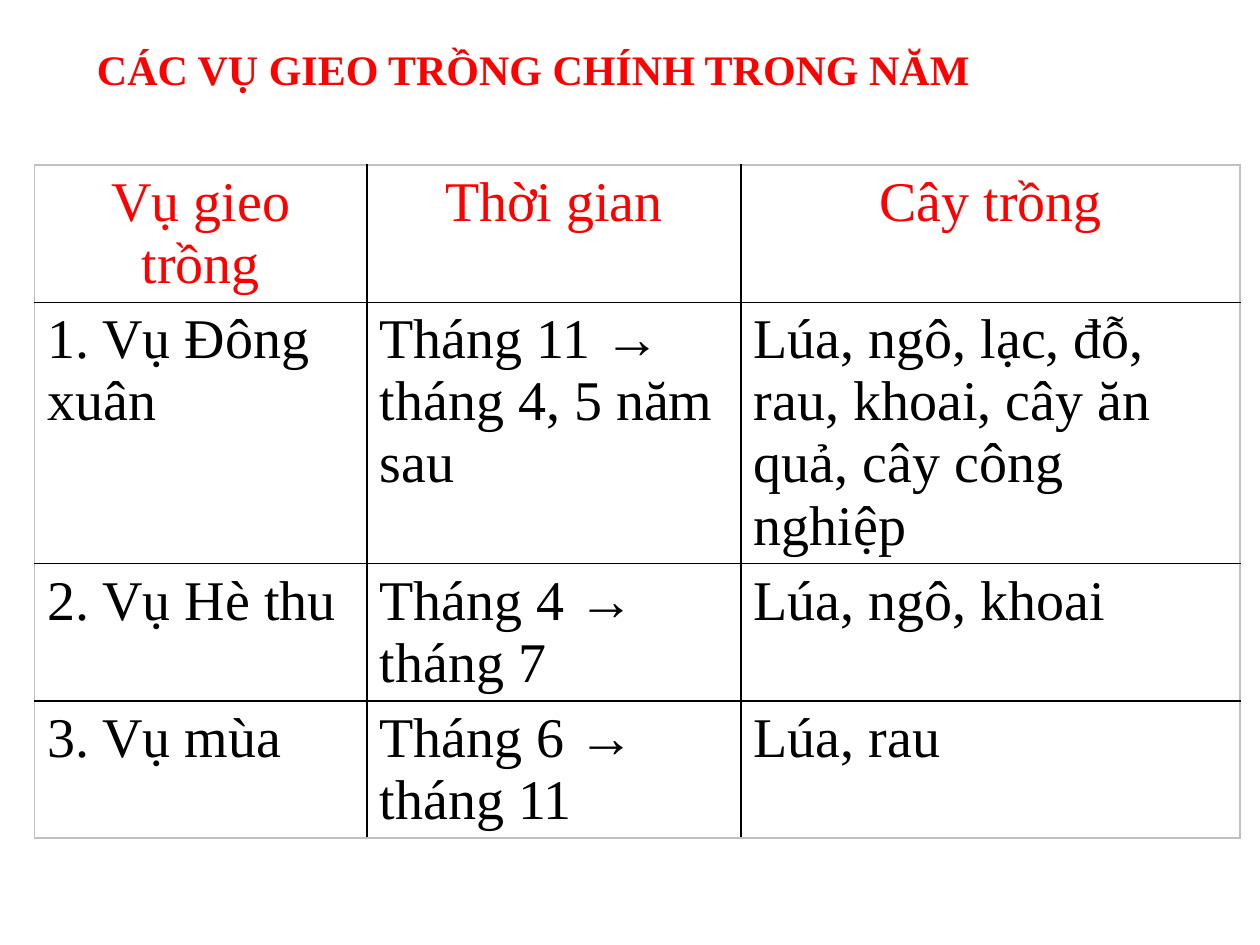
from dataclasses import dataclass

from lxml import etree
from pptx import Presentation
from pptx.dml.color import RGBColor
from pptx.enum.text import MSO_ANCHOR, MSO_AUTO_SIZE, PP_ALIGN
from pptx.oxml.ns import qn
from pptx.util import Cm, Pt

LEFT, CENTER = PP_ALIGN.LEFT, PP_ALIGN.CENTER
TOP = MSO_ANCHOR.TOP
NO_AUTOFIT = MSO_AUTO_SIZE.NONE
TITLE_ONLY = 5


@dataclass(frozen=True)
class Theme:
    font: str = "Times New Roman"
    accent: str = "FF0000"
    ink: str = "000000"
    paper: str = "FFFFFF"
    frame: str = "C0C0C0"
    title_size: int = 24
    table_size: int = 32
    border: int = 1


THEME = Theme()

TITLE = "CÁC VỤ GIEO TRỒNG CHÍNH TRONG NĂM"
SEASONS = [
    ("Vụ gieo trồng", "Thời gian", "Cây trồng"),
    ("1. Vụ Đông xuân", "Tháng 11 → tháng 4, 5 năm sau",
     "Lúa, ngô, lạc, đỗ, rau, khoai, cây ăn quả, cây công nghiệp"),
    ("2. Vụ Hè thu", "Tháng 4 → tháng 7", "Lúa, ngô, khoai"),
    ("3. Vụ mùa", "Tháng 6 → tháng 11", "Lúa, rau"),
]
COLUMN_WIDTHS = (6.7, 7.54, 10.06)
ROW_HEIGHTS = (2.67, 4.32, 2.51, 2.51)


def write_text(text_frame, text, *, size, color=THEME.ink, bold=False, align=LEFT):
    paragraph = text_frame.paragraphs[0]
    paragraph.alignment = align
    run = paragraph.add_run()
    run.text = text
    run.font.name = THEME.font
    run.font.size = Pt(size)
    run.font.bold = bold
    run.font.color.rgb = RGBColor.from_string(color)


def add_border(cell, side, color):
    properties = cell._tc.get_or_add_tcPr()
    line = etree.SubElement(properties, qn(f"a:ln{side}"), w=str(Pt(THEME.border)))
    fill = etree.SubElement(line, qn("a:solidFill"))
    etree.SubElement(fill, qn("a:srgbClr"), val=color)


def add_title(slide, text):
    title = slide.shapes.title
    title.left, title.top, title.width, title.height = Cm(1.7), Cm(0.64), Cm(19.33), Cm(1.57)
    text_frame = title.text_frame
    text_frame.word_wrap = True
    text_frame.auto_size = NO_AUTOFIT
    text_frame.vertical_anchor = TOP
    text_frame.margin_top = Cm(0.23)
    write_text(text_frame, text, size=THEME.title_size, color=THEME.accent, bold=True)


def format_cell(cell, outer_sides):
    for side, is_outer in outer_sides.items():
        add_border(cell, side, THEME.frame if is_outer else THEME.ink)
    cell.fill.solid()
    cell.fill.fore_color.rgb = RGBColor.from_string(THEME.paper)


def add_season_table(slide, rows):
    last_row, last_column = len(rows) - 1, len(COLUMN_WIDTHS) - 1
    table = slide.shapes.add_table(
        len(rows), len(COLUMN_WIDTHS), Cm(0.7), Cm(3.33),
        Cm(sum(COLUMN_WIDTHS)), Cm(sum(ROW_HEIGHTS))).table
    table.first_row = table.horz_banding = False
    for column, width in zip(table.columns, COLUMN_WIDTHS):
        column.width = Cm(width)
    for row, height in zip(table.rows, ROW_HEIGHTS):
        row.height = Cm(height)
    for row_index, texts in enumerate(rows):
        is_header = row_index == 0
        for column_index, text in enumerate(texts):
            cell = table.cell(row_index, column_index)
            format_cell(cell, {
                "L": column_index == 0,
                "R": column_index == last_column,
                "T": is_header,
                "B": row_index == last_row,
            })
            write_text(cell.text_frame, text, size=THEME.table_size,
                       color=THEME.accent if is_header else THEME.ink,
                       align=CENTER if is_header else LEFT)


def main():
    presentation = Presentation()
    presentation.slide_width, presentation.slide_height = Cm(25.4), Cm(19.05)
    slide = presentation.slides.add_slide(presentation.slide_layouts[TITLE_ONLY])
    add_season_table(slide, SEASONS)
    add_title(slide, TITLE)
    presentation.save("out.pptx")


if __name__ == "__main__":
    main()
